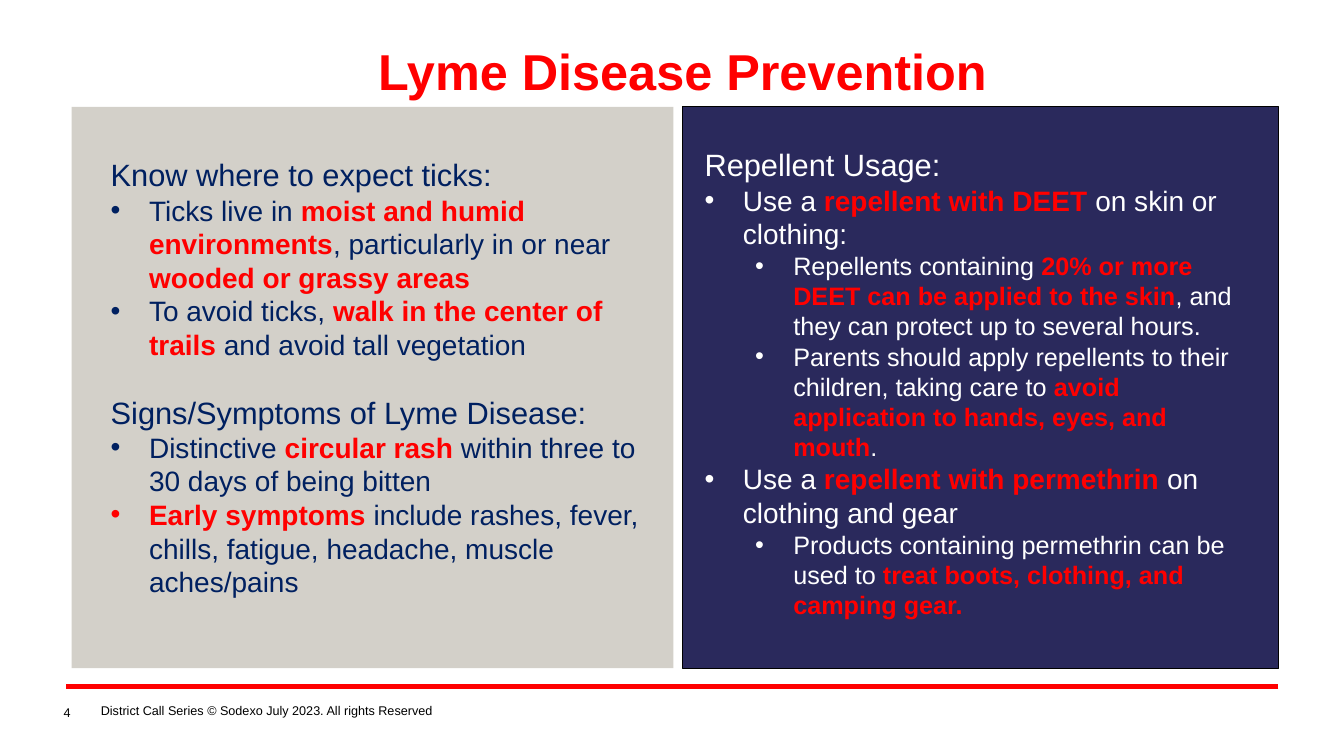
from lxml import etree
from pptx import Presentation
from pptx.dml.color import RGBColor
from pptx.enum.shapes import MSO_CONNECTOR, MSO_SHAPE
from pptx.enum.text import PP_ALIGN
from pptx.oxml.ns import qn
from pptx.util import Inches, Pt

# Content: (level, text); level 0 is a heading, 1 and 2 are bullets, ** marks emphasis
TITLE = "Lyme Disease Prevention"
FOOTER = "District Call Series © Sodexo July 2023. All rights Reserved"
PAGE_NUMBER = "4"
TICKS = [
    (0, "Know where to expect ticks:"),
    (1, "Ticks live in **moist and humid environments**, particularly in or near "
        "**wooded or grassy areas**"),
    (1, "To avoid ticks, **walk in the center of trails **and avoid tall vegetation"),
    (0, "Signs/Symptoms of Lyme Disease:"),
    (1, "Distinctive **circular rash **within three to 30 days of being bitten"),
    (1, "**Early symptoms** include rashes, fever, chills, fatigue, headache, "
        "muscle aches/pains"),
]
REPELLENT = [
    (0, "Repellent Usage:"),
    (1, "Use a **repellent with DEET **on skin or clothing:"),
    (2, "Repellents containing **20% or more DEET can be applied to the skin**, "
        "and they can protect up to several hours."),
    (2, "Parents should apply repellents to their children, taking care to "
        "**avoid application to hands, eyes, and mouth**."),
    (1, "Use a **repellent with permethrin** on clothing and gear"),
    (2, "Products containing permethrin can be used to "
        "**treat boots, clothing, and camping gear.**"),
]

COLORS = {"red": "FF0000", "gray": "D3D0C9", "indigo": "2A295C",
          "navy": "002060", "white": "FFFFFF", "black": "000000"}
LEVEL_SIZES = [22, 20, 18]
LEVEL_INDENTS = [0, 0.38, 0.88]
HANGING = 0.38
SECTION_GAP = 23
PANEL_TOP, PANEL_HEIGHT = 1.06, 5.57

# Panels: left, width, fill, outline, text color, text box, content
PANELS = [
    (0.71, 5.97, "gray", None, "navy", (1, 1.5, 5.5, 5.18), TICKS),
    (6.77, 5.91, "indigo", "black", "white", (6.89, 1.4, 5.67, 5.32), REPELLENT),
]


def rgb(name):
    return RGBColor.from_string(COLORS[name])


def add_bullet(paragraph, indent):
    properties = paragraph._p.get_or_add_pPr()
    properties.set("marL", str(Inches(indent)))
    properties.set("indent", str(-Inches(HANGING)))
    etree.SubElement(properties, qn("a:buFont")).set("typeface", "Arial")
    etree.SubElement(properties, qn("a:buChar")).set("char", "•")


def add_text(slide, box, lines, color="black", sizes=LEVEL_SIZES, bold=False,
             align=None, margins=True, line_spacing=None):
    frame = slide.shapes.add_textbox(*map(Inches, box)).text_frame
    frame.word_wrap = True
    if not margins:
        frame.margin_left = frame.margin_right = 0
        frame.margin_top = frame.margin_bottom = 0
    for number, (level, text) in enumerate(lines):
        paragraph = frame.add_paragraph() if number else frame.paragraphs[0]
        if level:
            paragraph.level = level - 1
            add_bullet(paragraph, LEVEL_INDENTS[level])
        elif number:
            paragraph.space_before = Pt(SECTION_GAP)
        if align is not None:
            paragraph.alignment = align
        if line_spacing:
            paragraph.line_spacing = line_spacing
        for part, words in enumerate(text.split("**")):
            if not words:
                continue
            emphasized = part % 2 == 1
            run = paragraph.add_run()
            run.text = words
            run.font.name = "Arial"
            run.font.size = Pt(sizes[level])
            run.font.bold = bold or emphasized
            run.font.color.rgb = rgb("red" if emphasized else color)


presentation = Presentation()
presentation.slide_width, presentation.slide_height = Inches(13.33), Inches(7.5)
slide = presentation.slides.add_slide(presentation.slide_layouts[6])

# Footer rule
rule = slide.shapes.add_connector(MSO_CONNECTOR.STRAIGHT, Inches(12.68),
                                  Inches(6.81), Inches(0.65), Inches(6.81))
rule.line.color.rgb = rgb("red")
rule.line.width = Pt(4)
etree.SubElement(rule._element.spPr, qn("a:effectLst"))

# Footer and title
add_text(slide, (1, 6.99, 8.92, 0.2), [(0, FOOTER)], sizes=[9],
         margins=False, line_spacing=0.9)
add_text(slide, (0.63, 6.99, 0.35, 0.21), [(0, PAGE_NUMBER)], sizes=[9], margins=False)
add_text(slide, (2.54, 0.35, 8.46, 0.71), [(0, TITLE)], color="red", sizes=[36],
         bold=True, align=PP_ALIGN.CENTER)

# Panels with their text
for left, width, fill, outline, color, box, lines in PANELS:
    panel = slide.shapes.add_shape(MSO_SHAPE.RECTANGLE, Inches(left), Inches(PANEL_TOP),
                                   Inches(width), Inches(PANEL_HEIGHT))
    panel.shadow.inherit = False
    panel.fill.solid()
    panel.fill.fore_color.rgb = rgb(fill)
    if outline:
        panel.line.color.rgb = rgb(outline)
        panel.line.width = Pt(1)
    else:
        panel.line.fill.background()
    add_text(slide, box, lines, color=color)

presentation.save("out.pptx")
